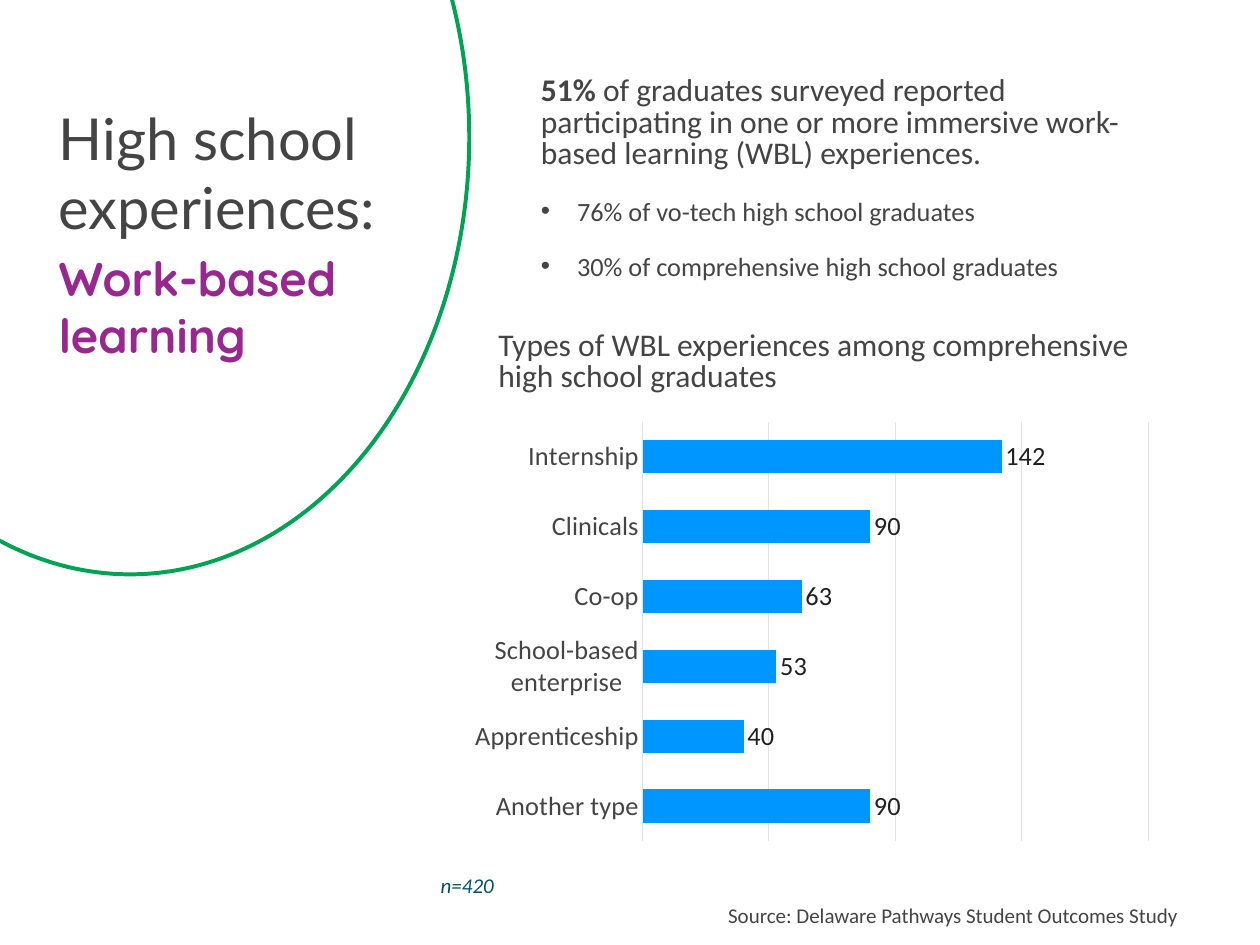
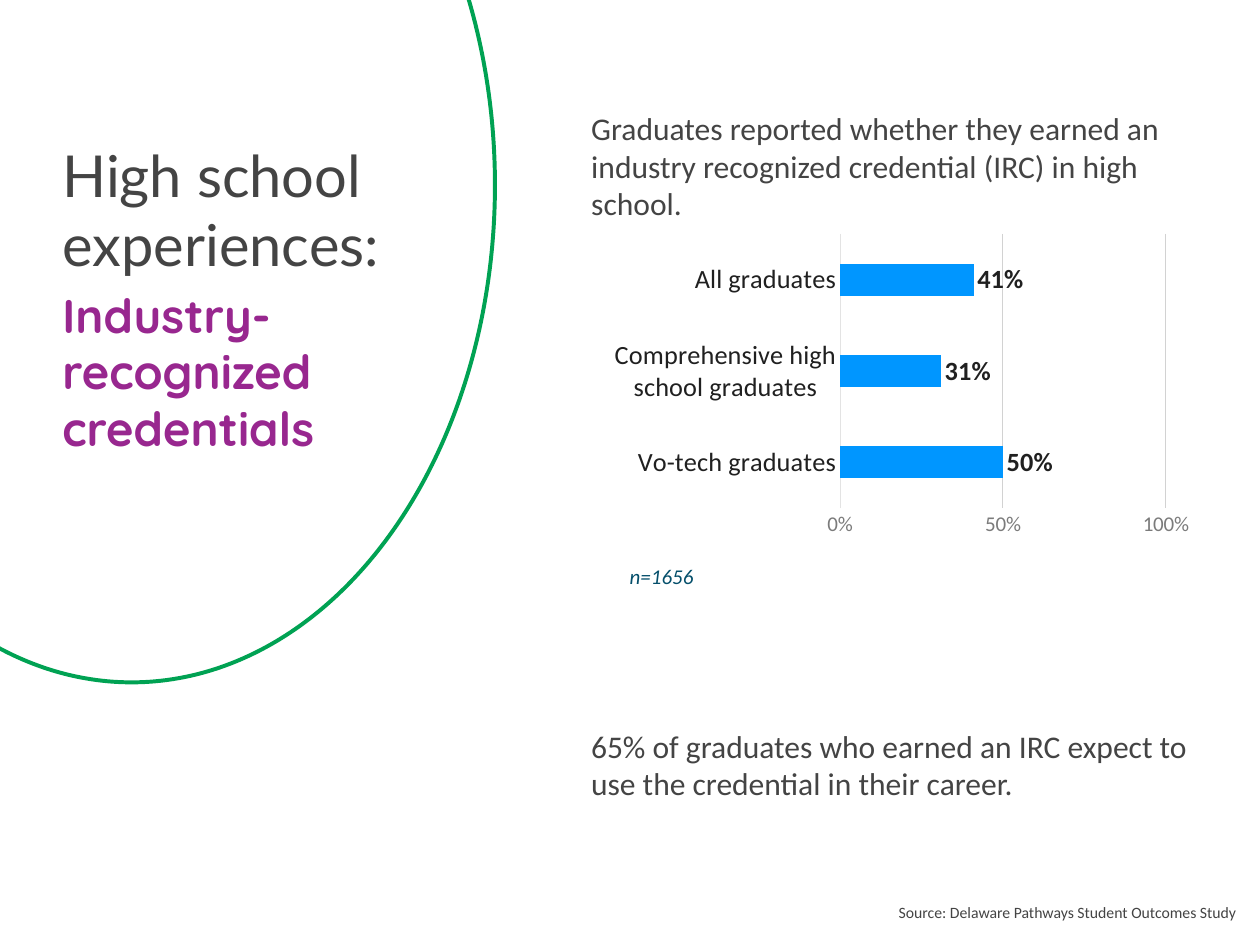
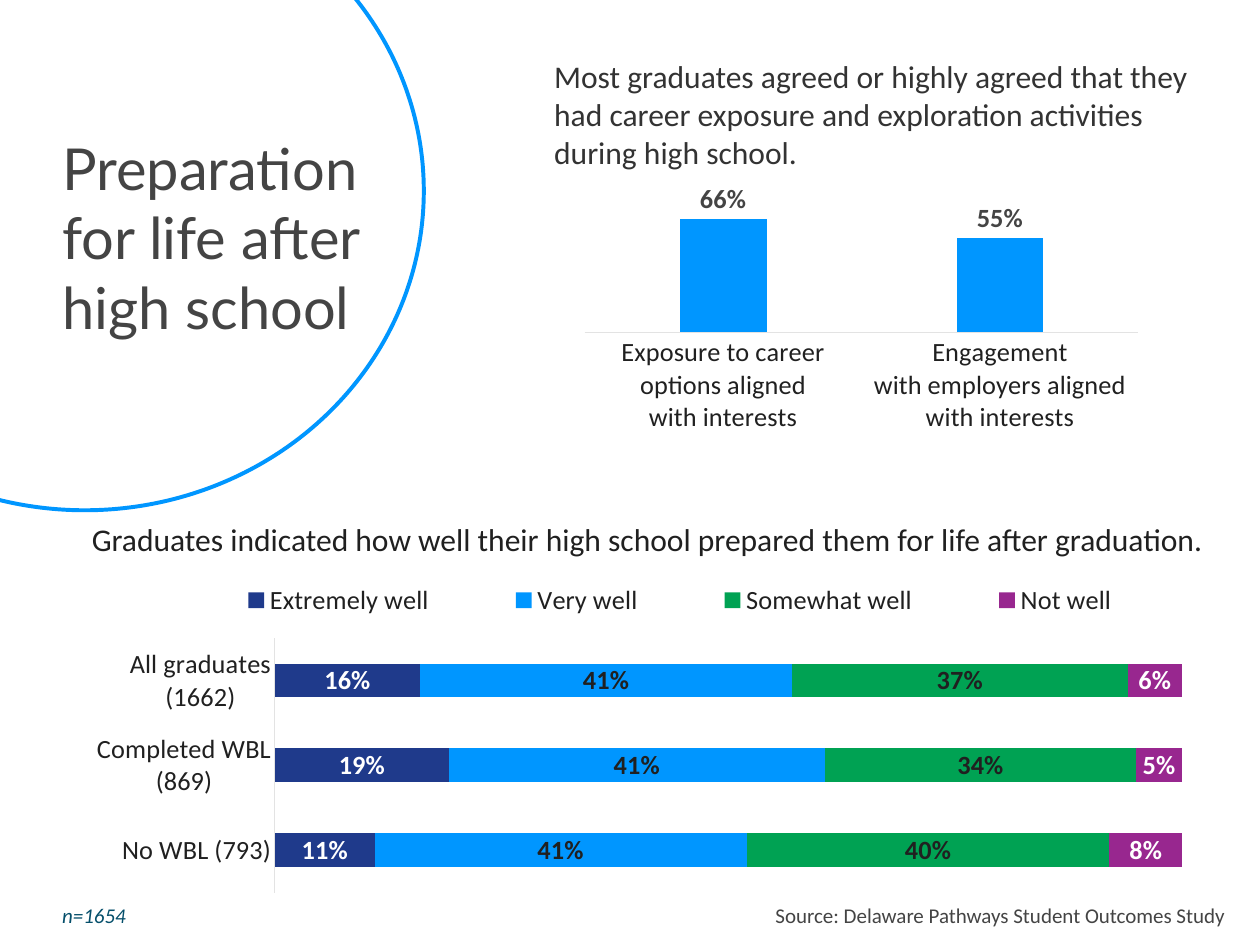
from dataclasses import dataclass
from lxml.etree import SubElement
from pptx import Presentation
from pptx.chart.data import CategoryChartData
from pptx.dml.color import RGBColor
from pptx.enum.chart import XL_CHART_TYPE as Kind, XL_LABEL_POSITION as Spot
from pptx.enum.chart import XL_LEGEND_POSITION as Side, XL_TICK_MARK as Tick
from pptx.enum.shapes import MSO_SHAPE as Form
from pptx.enum.text import MSO_ANCHOR as Anchor, MSO_AUTO_SIZE as Fit, PP_ALIGN as Align
from pptx.oxml.ns import qn
from pptx.util import Cm, Pt


@dataclass(frozen=True)
class Style:
    size: float
    color: str
    face: str = "Calibri"
    bold: bool = False
    slant: bool = False


@dataclass(frozen=True)
class Theme:
    ink: str = "202020"
    text: str = "444444"
    rule: str = "E3E3E3"
    grid: str = "D2D2D2"
    white: str = "FFFFFF"
    navy: str = "1F3A8B"
    blue: str = "0096FF"
    green: str = "00A253"
    plum: str = "98278F"
    head: Style = Style(44, "444444", "Lato")
    topic: Style = Style(36, "98278F", "Quicksand", True)
    lead: Style = Style(24, "444444")
    strong: Style = Style(24, "444444", bold=True)
    dark: Style = Style(24, "202020")
    soft: Style = Style(24, "333333")
    item: Style = Style(20, "444444")
    label: Style = Style(20, "202020")
    axis: Style = Style(16, "7B7B7B")
    note: Style = Style(16, "054F6B", slant=True)
    credit: Style = Style(16, "444444")
    small: Style = Style(12, "444444")


T = Theme()


def rgb(code):
    return RGBColor.from_string(code)


def dress(font, style, color=None, bold=None):
    font.name = style.face
    font.size = Pt(style.size)
    font.bold = style.bold if bold is None else bold
    font.italic = style.slant
    font.color.rgb = rgb(color or style.color)


def place(shape, box):
    shape.left, shape.top, shape.width, shape.height = map(Cm, box)


def write(shape, paras, after=0, line=None, align=Align.LEFT, bullets=False):
    frame = shape.text_frame
    frame.word_wrap = True
    frame.auto_size = Fit.NONE
    frame.vertical_anchor = Anchor.TOP
    for i, runs in enumerate(paras):
        para = frame.add_paragraph() if i else frame.paragraphs[0]
        props = para._p.get_or_add_pPr()
        dot = bullets and i > 0
        indent = Cm(0.97) if dot else 0
        props.set("marL", str(indent))
        props.set("indent", str(-indent))
        if dot:
            SubElement(props, qn("a:buFont")).set("typeface", "Arial")
            SubElement(props, qn("a:buChar")).set("char", "•")
        else:
            SubElement(props, qn("a:buNone"))
        para.alignment = align
        para.space_before = Pt(0)
        para.space_after = Pt(after)
        para.line_spacing = Pt(line) if line else 1.0
        for words, style in runs:
            run = para.add_run()
            run.text = words
            dress(run.font, style)


def label(slide, box, words, style, **form):
    write(slide.shapes.add_textbox(*map(Cm, box)), [[(words, style)]], **form)


def hero(slide, box, color, inset, size, paras):
    ring = slide.shapes.add_shape(Form.OVAL, *map(Cm, box))
    ring.shadow.inherit = False
    ring.fill.background()
    ring.line.color.rgb = rgb(color)
    ring.line.width = Pt(3)
    title = slide.shapes.title
    place(title, (box[0] + inset[0], box[1] + inset[1], *size))
    write(title, [[para] for para in paras], after=6)


def body(slide, box, paras, **form):
    shape = slide.placeholders[1]
    place(shape, box)
    write(shape, paras, **form)


def source(slide, left, style=T.credit):
    label(slide, (left, 24.1, 33.83 - left, 0.94),
          "Source: Delaware Pathways Student Outcomes Study", style)


def layout(parent, index, area, inner=False):
    for old in parent.findall(qn("c:layout")):
        parent.remove(old)
    outer = SubElement(parent, qn("c:layout"))
    parent.insert(index, outer)
    manual = SubElement(outer, qn("c:manualLayout"))
    pairs = [("layoutTarget", "inner")] if inner else []
    pairs += [("xMode", "edge"), ("yMode", "edge"), *zip("xywh", area)]
    for tag, value in pairs:
        SubElement(manual, qn("c:" + tag)).set("val", str(value))


def stroke(line, color):
    line.color.rgb = rgb(color)
    line.width = Pt(0.75)


def graph(slide, box, kind, cats, rows, area, gap, lap=None, fmt="0%",
          bold=True, tick=T.label, spot=Spot.OUTSIDE_END):
    data = CategoryChartData()
    data.categories = cats
    for name, values, *_ in rows:
        data.add_series(name, values)
    chart = slide.shapes.add_chart(kind, *map(Cm, box), data).chart
    chart.has_title = False
    chart.has_legend = False
    chart.font.name = T.label.face
    chart.font.size = Pt(10)
    chart.font.color.rgb = rgb(T.text)
    root = chart.element
    core = root.find(qn("c:chart"))
    clear = SubElement(root, qn("c:spPr"))
    SubElement(clear, qn("a:noFill"))
    SubElement(SubElement(clear, qn("a:ln")), qn("a:noFill"))
    core.addnext(clear)
    layout(core.find(qn("c:plotArea")), 0, area, True)
    plot = chart.plots[0]
    plot.vary_by_categories = False
    plot.gap_width = gap
    if lap is not None:
        plot.overlap = lap
    for series, (_, _, color, ink) in zip(plot.series, rows):
        series.format.fill.solid()
        series.format.fill.fore_color.rgb = rgb(color)
        marks = series.data_labels
        marks.show_value = True
        marks.number_format = fmt
        marks.number_format_is_linked = False
        marks.position = spot
        dress(marks.font, T.label, ink, bold)
    names, scale = chart.category_axis, chart.value_axis
    for axis in (names, scale):
        axis.major_tick_mark = axis.minor_tick_mark = Tick.NONE
    dress(names.tick_labels.font, tick)
    stroke(names.format.line, T.rule)
    names.has_major_gridlines = False
    scale.has_major_gridlines = False
    scale.visible = False
    scale.minimum_scale = 0
    scale.maximum_scale = 1
    return chart


def ruler(axis, top, step, color):
    axis.maximum_scale = top
    axis.major_unit = step
    axis.has_major_gridlines = True
    stroke(axis.major_gridlines.format.line, color)


def work(slide):
    hero(slide, (-5.61, -8.05, 18.21, 23.47), T.green, (6.93, 10.67), (12.17, 11.86),
         [("High school experiences:", T.head), ("Work-based learning", T.topic)])
    body(slide, (14.27, 1.93, 17.4, 6.58), [
        [("51% ", T.strong),
         ("of graduates surveyed reported participating in one or more immersive "
          "work-based learning (WBL) experiences.", T.lead)],
        [("76% of vo-tech high school graduates", T.item)],
        [("30% of comprehensive high school graduates", T.item)],
    ], after=18, line=24, bullets=True)
    chart = graph(
        slide, (7.7, 10.11, 23.7, 13.31), Kind.BAR_CLUSTERED,
        ["Internship", "Clinicals", "Co-op", "School-based\nenterprise",
         "Apprenticeship", "Another type"],
        [("Series 1", (142, 90, 63, 53, 40, 90), T.blue, T.ink)],
        (0.403, 0.091, 0.573, 0.846), 111, fmt="General", bold=False, tick=T.item)
    chart.category_axis.reverse_order = True
    ruler(chart.value_axis, 200, 50, T.rule)
    label(slide, (13.13, 8.76, 18.26, 1.98),
          "Types of WBL experiences among comprehensive high school graduates",
          T.lead, after=18, line=24)
    label(slide, (10.36, 23.29, 3.15, 0.94), "n=420", T.note, align=Align.RIGHT)
    source(slide, 19.3)


def badge(slide):
    hero(slide, (-6.22, -8.38, 19.51, 26.7), T.green, (7.64, 11.99), (12.17, 11.86),
         [("High school experiences:", T.head),
          ("Industry-recognized credentials", T.topic)])
    body(slide, (15.62, 2.79, 17.15, 7.14), [[
        ("Graduates reported whether they earned an industry recognized "
         "credential (IRC) in high school.", T.lead)]])
    chart = graph(
        slide, (15.9, 5.51, 16.51, 10.13), Kind.BAR_CLUSTERED,
        ["Vo-tech graduates", "Comprehensive high\nschool graduates", "All graduates"],
        [("Series 1", (0.5, 0.31, 0.41), T.blue, T.ink)],
        (0.403, 0.076, 0.53, 0.727), 186)
    scale = chart.value_axis
    scale.visible = True
    ruler(scale, 1, 0.5, T.grid)
    scale.format.line.fill.background()
    scale.tick_labels.number_format = "0%"
    scale.tick_labels.number_format_is_linked = False
    dress(scale.tick_labels.font, T.axis)
    label(slide, (15.72, 15.01, 3.15, 0.94), "n=1656", T.note, align=Align.RIGHT)
    label(slide, (15.62, 19.38, 17.6, 3.3),
          "65% of graduates who earned an IRC expect to use the credential "
          "in their career.", T.lead)
    source(slide, 23.88, T.small)


def life(slide):
    hero(slide, (-6.83, -3.45, 18.21, 17.15), T.blue, (8.25, 6.88), (9.96, 9.17),
         [("Preparation for life after high school", T.head)])
    label(slide, (14.63, 1.4, 18.21, 2.79),
          "Most graduates agreed or highly agreed that they had career exposure "
          "and exploration activities during high school.", T.soft)
    graph(slide, (14.63, 3.91, 16.43, 8.31), Kind.COLUMN_CLUSTERED,
          ["Exposure to career\noptions aligned\nwith interests",
           "Engagement\nwith employers aligned\nwith interests"],
          [("Series 1", (0.66, 0.55), T.blue, T.text)],
          (0.065, 0.049, 0.905, 0.555), 219, -27)
    body(slide, (2.21, 13.84, 31.29, 1.65), [[
        ("Graduates indicated how well their high school prepared them "
         "for life after graduation.", T.dark)]])
    chart = graph(
        slide, (-7.11, 15.27, 40.26, 9.96), Kind.BAR_STACKED_100,
        ["No WBL (793)", "Completed WBL\n(869)", "All graduates\n(1662)"],
        [("Extremely well", (0.11, 0.19, 0.16), T.navy, T.white),
         ("Very well", (0.41, 0.41, 0.41), T.blue, T.ink),
         ("Somewhat well", (0.4, 0.34, 0.37), T.green, T.ink),
         ("Not well", (0.08, 0.05, 0.06), T.plum, T.white)],
        (0.36, 0.187, 0.605, 0.686), 150, 100, spot=Spot.CENTER)
    chart.has_legend = True
    key = chart.legend
    key.position = Side.TOP
    key.include_in_layout = False
    dress(key.font, T.label)
    layout(chart.element.find(".//" + qn("c:legend")), 1, (0.29, 0.03, 0.68, 0.11))
    label(slide, (1.42, 24.1, 2.36, 0.97), "n=1654", T.note)
    source(slide, 20.57)


def main():
    deck = Presentation()
    deck.slide_width, deck.slide_height = Cm(33.83), Cm(25.37)
    for build in (work, badge, life):
        build(deck.slides.add_slide(deck.slide_layouts[1]))
    deck.save("out.pptx")


if __name__ == "__main__":
    main()
